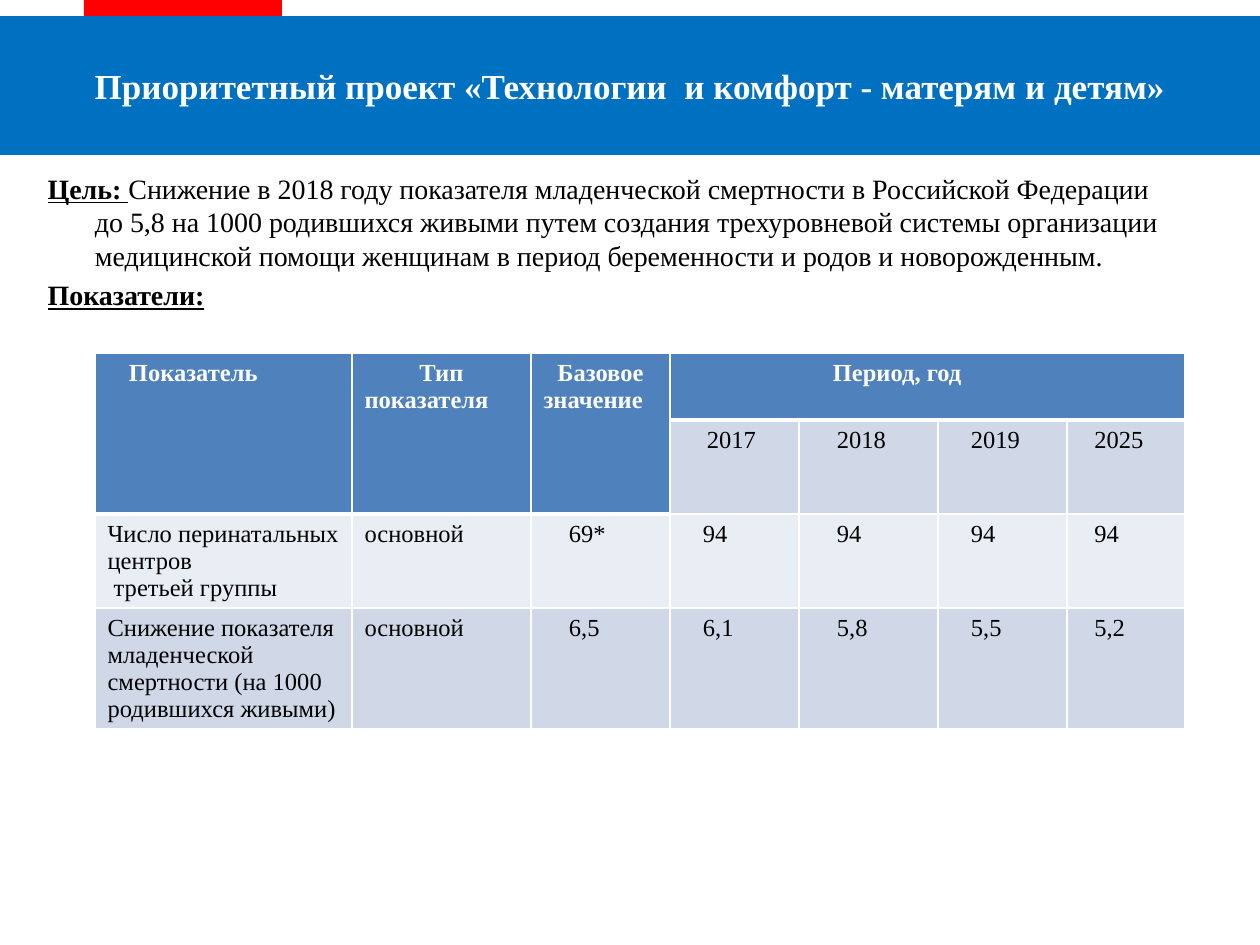
from dataclasses import dataclass

from lxml.etree import SubElement
from pptx import Presentation
from pptx.dml.color import RGBColor
from pptx.enum.shapes import MSO_SHAPE
from pptx.enum.text import MSO_ANCHOR as Anchor, MSO_AUTO_SIZE as AutoSize, PP_ALIGN as Align
from pptx.oxml.ns import qn
from pptx.util import Emu, Pt

SLIDE_SIZE = (1260, 945)
EMU_PER_PX = 914400 / 126
TITLE = "Приоритетный проект «Технологии  и комфорт - матерям и детям»"
BODY = [
    [("Цель: ", True),
     ("Снижение в 2018 году показателя младенческой смертности в Российской Федерации ", False),
     None,
     ("до 5,8 на 1000 родившихся живыми путем создания трехуровневой системы организации "
      "медицинской помощи женщинам в период беременности и родов и новорожденным.", False)],
    [("Показатели:", True)],
]
COLUMN_WIDTHS = [257, 179, 139, 129, 139, 129, 118]
ROW_HEIGHTS = [67, 94, 94, 120]
MERGES = [((0, 0), (1, 0)), ((0, 1), (1, 1)), ((0, 2), (1, 2)), ((0, 3), (0, 6))]
ROWS = [
    ["Показатель \t", "Тип показателя \t", "Базовое значение \t", "Период, год \t", None, None, None],
    [None, None, None, "2017 ", "2018 \t", "2019 \t", "2025 \t"],
    ["Число перинатальных центров\n третьей группы", "основной",
     "69* \t", "94 \t", "94 \t", "94 \t", "94 \t"],
    ["Снижение показателя младенческой смертности (на 1000 родившихся живыми)", "основной",
     "6,5 \t", "6,1 \t", "5,8 \t", "5,5 \t", "5,2 \t"],
]


@dataclass(frozen=True)
class Theme:
    font: str = "Times New Roman"
    band: str = "0070C0"
    accent: str = "FF0000"
    header: str = "4F81BD"
    stripes: tuple = ("E9EDF4", "D0D8E8")
    light: str = "FFFFFF"
    dark: str = "000000"
    title_size: int = 20
    body_size: int = 16
    table_size: int = 14
    thin: int = 1
    thick: int = 3


class SlideBuilder:
    """Builds the elements of one slide in a shared theme."""

    def __init__(self, slide, theme):
        self.slide = slide
        self.theme = theme

    @staticmethod
    def px(length):
        return Emu(round(length * EMU_PER_PX))

    def place(self, shape, box):
        for name, length in zip(("left", "top", "width", "height"), box):
            setattr(shape, name, self.px(length))

    def fill(self, target, color):
        target.fill.solid()
        target.fill.fore_color.rgb = RGBColor.from_string(color)

    def add_text(self, paragraph, text, size, color, **formats):
        run = paragraph.add_run()
        run.text = text
        for name, value in {"name": self.theme.font, "size": Pt(size), **formats}.items():
            setattr(run.font, name, value)
        run.font.color.rgb = RGBColor.from_string(color)

    def title(self, text, box):
        shape = self.slide.shapes.title
        self.place(shape, box)
        self.fill(shape, self.theme.band)
        frame = shape.text_frame
        for name, value in {"vertical_anchor": Anchor.MIDDLE, "auto_size": AutoSize.NONE}.items():
            setattr(frame, name, value)
        frame.paragraphs[0].alignment = Align.CENTER
        self.add_text(frame.paragraphs[0], text, self.theme.title_size, self.theme.light, bold=True)

    def rectangle(self, color, box):
        shape = self.slide.shapes.add_shape(MSO_SHAPE.RECTANGLE, *map(self.px, box))
        shape.shadow.inherit = False
        self.fill(shape, color)
        shape.line.fill.background()

    def body(self, paragraphs, box):
        shape = self.slide.placeholders[1]
        self.place(shape, box)
        frame = shape.text_frame
        frame.auto_size = AutoSize.NONE
        for index, parts in enumerate(paragraphs):
            paragraph = frame.add_paragraph() if index else frame.paragraphs[0]
            SubElement(paragraph._p.get_or_add_pPr(), qn("a:buNone"))
            for part in parts:
                if part is None:
                    paragraph.add_line_break()
                    continue
                text, strong = part
                self.add_text(paragraph, text, self.theme.body_size, self.theme.dark,
                              bold=strong, underline=strong)

    def borders(self, cell, bottom):
        properties = cell._tc.get_or_add_tcPr()
        widths = {"a:lnL": self.theme.thin, "a:lnR": self.theme.thin, "a:lnB": bottom}
        for tag, width in widths.items():
            line = SubElement(properties, qn(tag), w=str(int(Pt(width))))
            SubElement(SubElement(line, qn("a:solidFill")), qn("a:srgbClr"), val=self.theme.light)

    def cell(self, cell, text, row, column):
        theme = self.theme
        is_header = row == 0 or (row == 1 and column < 3)
        self.borders(cell, theme.thick if is_header else theme.thin)
        self.fill(cell, theme.header if is_header else theme.stripes[row % 2])
        if text is None:
            return
        is_centered = row < 2 or column > 1
        for index, line in enumerate(text.split("\n")):
            frame = cell.text_frame
            paragraph = frame.add_paragraph() if index else frame.paragraphs[0]
            paragraph.alignment = Align.CENTER if is_centered else Align.LEFT
            self.add_text(paragraph, line, theme.table_size,
                          theme.light if is_header else theme.dark, bold=is_header)

    def table(self, rows, left, top):
        box = (left, top, sum(COLUMN_WIDTHS), sum(ROW_HEIGHTS))
        table = self.slide.shapes.add_table(len(rows), len(rows[0]), *map(self.px, box)).table
        for column, width in zip(table.columns, COLUMN_WIDTHS):
            column.width = self.px(width)
        for row, height in zip(table.rows, ROW_HEIGHTS):
            row.height = self.px(height)
        for first, last in MERGES:
            table.cell(*first).merge(table.cell(*last))
        for row, texts in enumerate(rows):
            for column, text in enumerate(texts):
                self.cell(table.cell(row, column), text, row, column)


def main():
    presentation = Presentation()
    presentation.slide_width, presentation.slide_height = map(SlideBuilder.px, SLIDE_SIZE)
    theme = Theme()
    slide = presentation.slides.add_slide(presentation.slide_layouts[1])
    builder = SlideBuilder(slide, theme)
    builder.title(TITLE, (0, 16, 1260, 139))
    builder.rectangle(theme.accent, (84, 0, 198, 16))
    builder.body(BODY, (35, 165, 1211, 624))
    builder.table(ROWS, 95, 353)
    presentation.save("out.pptx")


if __name__ == "__main__":
    main()
